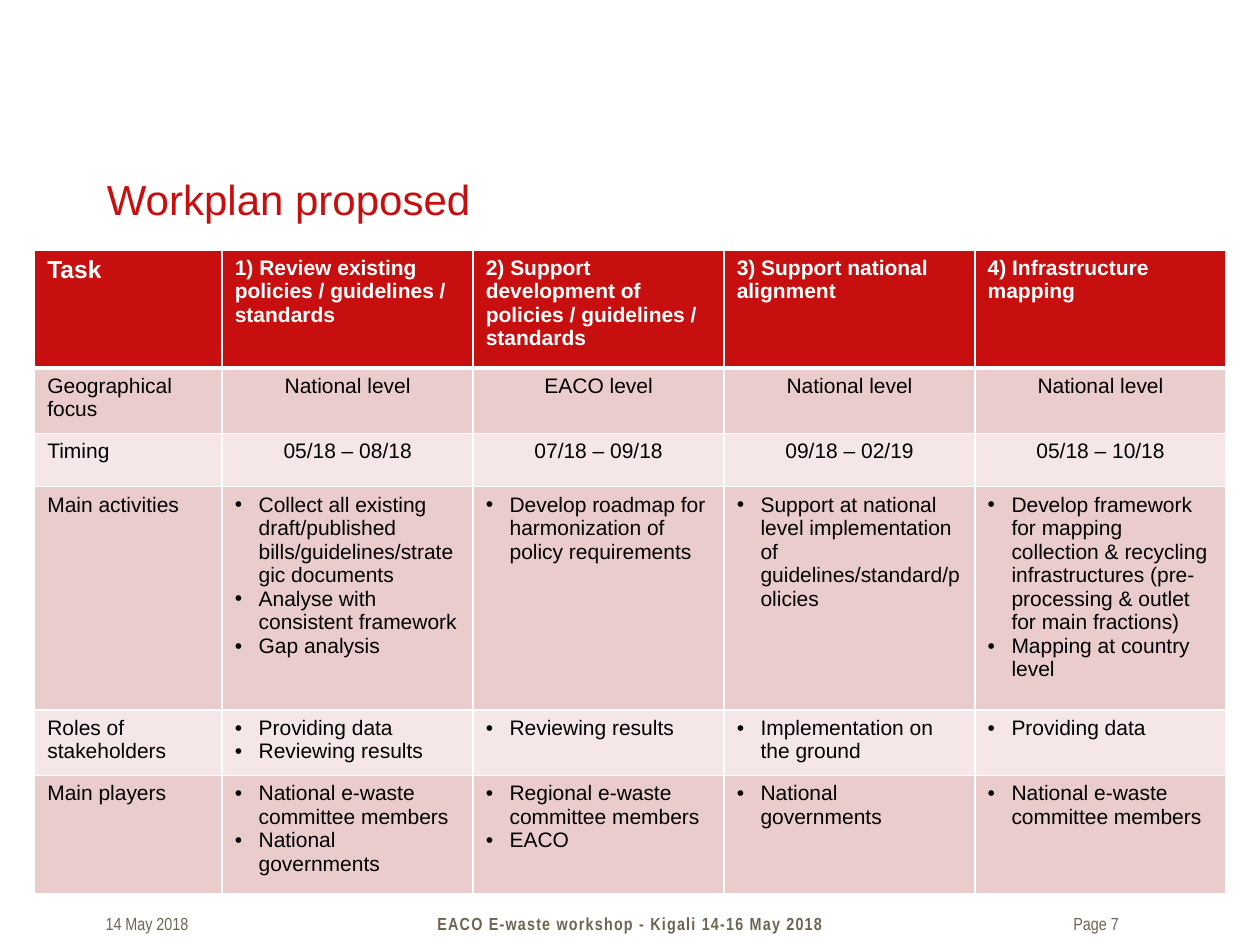
from dataclasses import dataclass

from lxml import etree
from pptx import Presentation
from pptx.dml.color import RGBColor
from pptx.enum import text as t
from pptx.oxml import ns
from pptx.util import Cm, Pt


@dataclass(frozen=True)
class Theme:
    """Colours, fonts and type sizes."""
    red: str = "C80F0F"
    rose: str = "EBCCCC"
    blush: str = "F5E7E7"
    white: str = "FFFFFF"
    black: str = "000000"
    taupe: str = "6E6452"
    sans: str = "Arial"
    slim: str = "Arial Narrow"
    title: int = 24
    head: int = 14
    body: int = 12
    foot: int = 10


class Deck:
    """Holds the style and the current slide."""

    def __init__(self, theme, wide, high):
        self.theme = theme
        self.prs = Presentation()
        self.prs.slide_width, self.prs.slide_height = Cm(wide), Cm(high)
        self.slide = self.prs.slides.add_slide(self.prs.slide_layouts[5])

    def run(self, para, words, size, color, face, bold=False):
        run = para.add_run()
        run.text = words
        font = run.font
        font.size, font.name, font.bold = Pt(size), face, bold
        font.color.rgb = RGBColor.from_string(color)
        return run

    def title(self, words, left, top, wide, high):
        box = self.slide.shapes.title
        box.left, box.top, box.width, box.height = map(Cm, (left, top, wide, high))
        frame = box.text_frame
        frame.auto_size = t.MSO_AUTO_SIZE.NONE
        frame.vertical_anchor = t.MSO_ANCHOR.TOP
        frame.margin_top = Cm(0.2)
        para = frame.paragraphs[0]
        para.alignment = t.PP_ALIGN.LEFT
        self.run(para, words, self.theme.title, self.theme.red, self.theme.sans)

    def foot(self, words, left, wide, align=t.PP_ALIGN.LEFT, bold=False, space=0):
        box = self.slide.shapes.add_textbox(Cm(left), Cm(18.29), Cm(wide), Cm(0.69))
        frame = box.text_frame
        frame.word_wrap = True
        frame.auto_size = t.MSO_AUTO_SIZE.SHAPE_TO_FIT_TEXT
        para = frame.paragraphs[0]
        para.alignment = align
        run = self.run(para, words, self.theme.foot, self.theme.taupe, self.theme.slim, bold)
        if space:
            run.font._element.set("spc", str(space))

    def bullet(self, para):
        props = para._p.get_or_add_pPr()
        props.set("marL", str(Cm(0.48)))
        props.set("indent", str(-Cm(0.48)))
        font = etree.SubElement(props, ns.qn("a:buFont"))
        font.set("typeface", self.theme.sans)
        etree.SubElement(props, ns.qn("a:buChar")).set("char", "•")

    def edge(self, cell, **widths):
        props = cell._tc.get_or_add_tcPr()
        for side in "LRTB":
            line = etree.SubElement(props, ns.qn(f"a:ln{side}"))
            line.set("w", str(Pt(widths.get(side, 1))))
            fill = etree.SubElement(line, ns.qn("a:solidFill"))
            etree.SubElement(fill, ns.qn("a:srgbClr")).set("val", self.theme.white)

    def cell(self, cell, item, row, col):
        th = self.theme
        head = row == 0
        self.edge(cell, T=3 if row == 1 else 1, B=3 if head else 1)
        cell.fill.solid()
        shade = th.red if head else th.rose if row % 2 else th.blush
        cell.fill.fore_color.rgb = RGBColor.from_string(shade)
        listed = isinstance(item, list)
        frame = cell.text_frame
        for i, words in enumerate(item if listed else [item]):
            para = frame.add_paragraph() if i else frame.paragraphs[0]
            if listed:
                self.bullet(para)
            elif col and not head:
                para.alignment = t.PP_ALIGN.CENTER
            size = th.head if head and not col else th.body
            self.run(para, words, size, th.white if head else th.black, th.sans, head)

    def table(self, rows, left, top, cols, highs):
        grid = self.slide.shapes.add_table(
            len(rows), len(cols), Cm(left), Cm(top), Cm(sum(cols)), Cm(sum(highs))).table
        grid.horz_banding = False
        for part, wide in zip(grid.columns, cols):
            part.width = Cm(wide)
        for part, high in zip(grid.rows, highs):
            part.height = Cm(high)
        for r, row in enumerate(rows):
            for c, item in enumerate(row):
                self.cell(grid.cell(r, c), item, r, c)


PLAN = [
    ["Task", "1) Review existing policies / guidelines / standards",
     "2) Support development of policies / guidelines / standards",
     "3) Support national alignment", "4) Infrastructure mapping"],
    ["Geographical focus", "National level", "EACO level", "National level",
     "National level"],
    ["Timing", "05/18 – 08/18", "07/18 – 09/18", "09/18 – 02/19", "05/18 – 10/18"],
    ["Main activities",
     ["Collect all existing draft/published bills/guidelines/strategic documents",
      "Analyse with consistent framework", "Gap analysis"],
     ["Develop roadmap for harmonization of policy requirements"],
     ["Support at national level implementation of guidelines/standard/policies"],
     ["Develop framework for mapping collection & recycling infrastructures "
      "(pre-processing & outlet for main fractions)", "Mapping at country level"]],
    ["Roles of stakeholders", ["Providing data", "Reviewing results"],
     ["Reviewing results"], ["Implementation on the ground"], ["Providing data"]],
    ["Main players",
     ["National e-waste committee members", "National governments"],
     ["Regional e-waste committee members", "EACO"],
     ["National governments"], ["National e-waste committee members"]],
]


def main():
    deck = Deck(Theme(), 25.4, 19.05)
    deck.title("Workplan proposed", 1.9, 3.3, 21.6, 1.73)
    deck.foot("Page 7", 21.39, 2.57)
    deck.foot("EACO E-waste workshop - Kigali 14-16 May 2018", 7.95, 9.5,
              t.PP_ALIGN.CENTER, True, 70)
    deck.foot("14 May 2018", 1.88, 3.6)
    deck.table(PLAN, 0.7, 5.04, [3.78] + [5.06] * 4, [2.38, 1.32, 1.07, 4.5, 1.32, 2.38])
    deck.prs.save("out.pptx")


if __name__ == "__main__":
    main()
